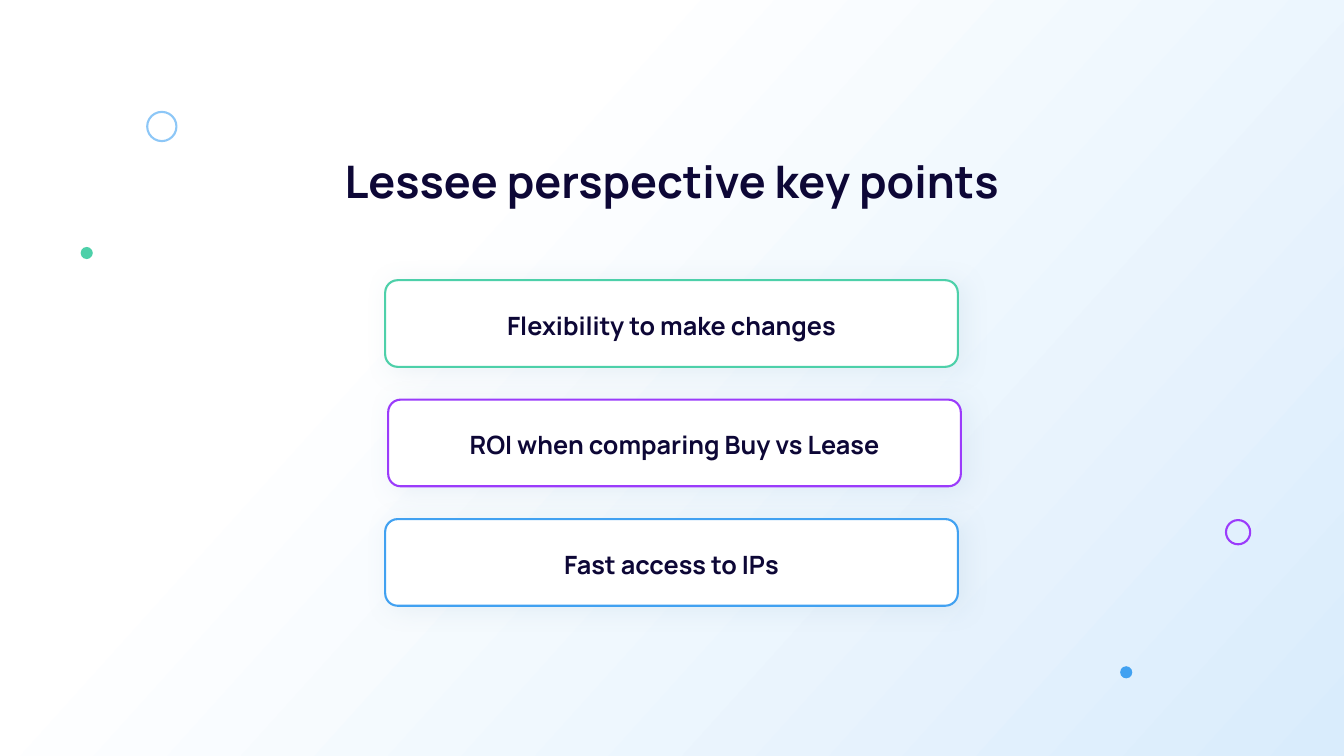
from copy import deepcopy

from lxml.etree import SubElement
from pptx import Presentation
from pptx.dml.color import RGBColor
from pptx.enum.shapes import MSO_SHAPE
from pptx.enum.text import MSO_ANCHOR, PP_ALIGN
from pptx.oxml.ns import qn
from pptx.util import Inches, Pt

WIDTH, HEIGHT = 13.33, 7.5
COLOURS = {
    "ink": "0D0736", "white": "FFFFFF", "mist": "D9ECFC", "shade": "789FBA",
    "green": "4DD0A9", "purple": "9B3BFB", "blue": "41A1F1", "sky": "8DC7F7",
}
FONT = {"name": "Manrope", "bold": True}

# Card column: left edge, first row, row pitch and card size in inches
CARD_LEFT, CARD_TOP, CARD_PITCH = 3.82, 2.78, 1.185
CARD_WIDTH, CARD_HEIGHT = 5.68, 0.86
CARDS = [  # text, outline, shift to the right
    ("Flexibility to make changes", "green", 0),
    ("ROI when comparing Buy vs Lease", "purple", 0.03),
    ("Fast access to IPs", "blue", 0),
]
RINGS = [(12.16, 5.16, 0.24, "purple"), (1.46, 1.11, 0.29, "sky")]
DOTS = [(11.11, 6.61, 0.12, "blue"), (0.8, 2.45, 0.12, "green")]


def colour(name):
    return RGBColor.from_string(COLOURS[name])


def paint_background(page):
    """Diagonal gradient: white up to 31 %, then pale blue."""
    fill = page.background.fill
    fill.gradient()
    fill.gradient_angle = 360 - 42
    first = next(page.element.iter(qn("a:gs")))
    first.addnext(deepcopy(first))
    stops = [(0, "white"), (0.31, "white"), (1, "mist")]
    for stop, (position, name) in zip(fill.gradient_stops, stops):
        stop.position = position
        stop.color.rgb = colour(name)


def write(frame, text, size, line_spacing=None):
    """One centred paragraph in the slide's font."""
    frame.word_wrap = True
    frame.vertical_anchor = MSO_ANCHOR.MIDDLE
    para = frame.paragraphs[0]
    para.alignment = PP_ALIGN.CENTER
    para.line_spacing = line_spacing
    span = para.add_run()
    span.text = text
    for key, value in {**FONT, "size": Pt(size)}.items():
        setattr(span.font, key, value)
    span.font.color.rgb = colour("ink")


def add_title(page, text):
    title = page.shapes.title
    place = {"left": 0, "top": 1.4, "width": WIDTH, "height": 0.7}
    for key, value in place.items():
        setattr(title, key, Inches(value))
    write(title.text_frame, text, 32, Pt(44.4))


def add_outlined(page, kind, left, top, width, height, fill=None, line=None):
    shape = page.shapes.add_shape(
        kind, Inches(left), Inches(top), Inches(width), Inches(height))
    shape.shadow.inherit = False
    if fill:
        shape.fill.solid()
        shape.fill.fore_color.rgb = colour(fill)
    else:
        shape.fill.background()
    if line:
        shape.line.color.rgb = colour(line)
        shape.line.width = Pt(1.5)
    else:
        shape.line.fill.background()
    return shape


def add_soft_shadow(shape):
    effects = shape.element.spPr.find(qn("a:effectLst"))
    shadow = SubElement(effects, qn("a:outerShdw"), {
        "blurRad": str(Pt(17.7)), "dist": str(Pt(4)),
        "dir": str(26 * 60000), "algn": "ctr", "rotWithShape": "0"})
    shade = SubElement(shadow, qn("a:srgbClr"), val=COLOURS["shade"])
    SubElement(shade, qn("a:alpha"), val="13000")


def add_card(page, row, text, line, shift):
    card = add_outlined(
        page, MSO_SHAPE.ROUNDED_RECTANGLE, CARD_LEFT + shift,
        CARD_TOP + row * CARD_PITCH, CARD_WIDTH, CARD_HEIGHT, "white", line)
    card.adjustments[0] = 0.144
    add_soft_shadow(card)
    write(card.text_frame, text, 18)
    card.text_frame.margin_top = Inches(0.08)


def main():
    deck = Presentation()
    deck.slide_width, deck.slide_height = Inches(WIDTH), Inches(HEIGHT)
    page = deck.slides.add_slide(deck.slide_layouts[5])
    paint_background(page)
    add_title(page, "Lessee perspective key points")

    # Decorative circles
    for left, top, size, name in RINGS:
        add_outlined(page, MSO_SHAPE.OVAL, left, top, size, size, line=name)
    for left, top, size, name in DOTS:
        add_outlined(page, MSO_SHAPE.OVAL, left, top, size, size, fill=name)

    # Key points
    for row, card in enumerate(CARDS):
        add_card(page, row, *card)
    deck.save("out.pptx")


if __name__ == "__main__":
    main()
